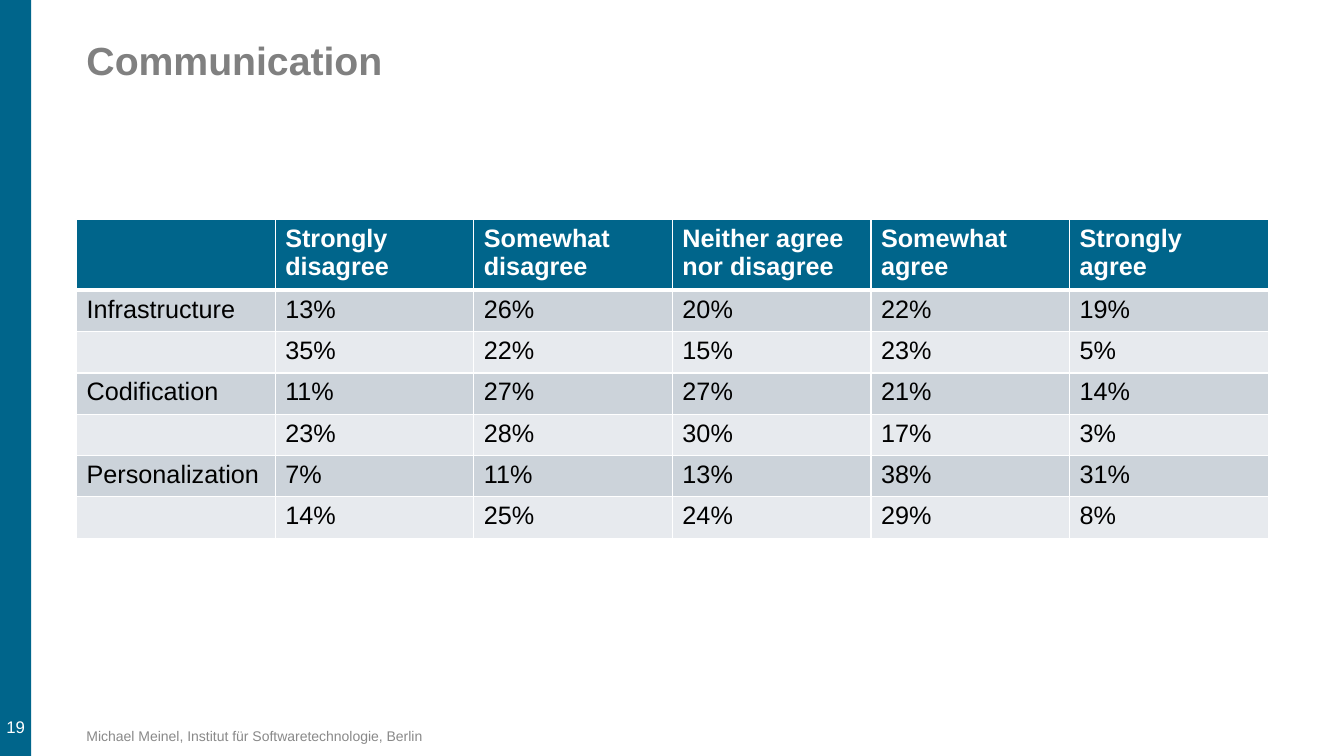
from dataclasses import dataclass

from lxml import etree
from pptx import Presentation
from pptx.dml.color import RGBColor
from pptx.enum.shapes import MSO_SHAPE
from pptx.enum.text import MSO_ANCHOR, PP_ALIGN
from pptx.oxml.ns import qn
from pptx.slide import Slide
from pptx.table import _Cell
from pptx.text.text import TextFrame
from pptx.util import Inches, Pt

RECTANGLE = MSO_SHAPE.RECTANGLE
TOP, MIDDLE, BOTTOM = MSO_ANCHOR.TOP, MSO_ANCHOR.MIDDLE, MSO_ANCHOR.BOTTOM
LEFT, CENTER = PP_ALIGN.LEFT, PP_ALIGN.CENTER

FONT = "Arial"
COLORS = {
    "blue": "00658B",
    "white": "FFFFFF",
    "black": "000000",
    "title": "808080",
    "footer": "898989",
    "odd_row": "CCD3DA",
    "even_row": "E7EAEE",
}

MARGIN = 0.76
BAR_WIDTH = 0.31
TABLE_TOP = 2.18
COLUMN_WIDTH = 1.97
HEADER_HEIGHT = 0.65
ROW_HEIGHT = 0.41

# "\v" breaks the line, "\n" starts a new paragraph.
ROWS = [
    ["", "Strongly disagree", "Somewhat disagree", "Neither agree nor disagree",
     "Somewhat\nagree", "Strongly\vagree"],
    ["Infrastructure", "13%", "26%", "20%", "22%", "19%"],
    ["", "35%", "22%", "15%", "23%", "5%"],
    ["Codification", "11%", "27%", "27%", "21%", "14%"],
    ["", "23%", "28%", "30%", "17%", "3%"],
    ["Personalization", "7%", "11%", "13%", "38%", "31%"],
    ["", "14%", "25%", "24%", "29%", "8%"],
]


@dataclass
class Label:
    text: str
    left: float
    top: float
    width: float
    height: float
    size: int
    color: str
    bold: bool = False
    anchor: MSO_ANCHOR = TOP
    align: PP_ALIGN = LEFT
    wrap: bool = True
    side_inset: float = 0.1
    end_inset: float = 0.05
    line_spacing: float = 1.0


LABELS = [
    Label("19", 0, 5.84, BAR_WIDTH, 1.57, 12, "white", anchor=BOTTOM, align=CENTER,
          wrap=False, side_inset=0.04, end_inset=0.1),
    Label("Michael Meinel, Institut für Softwaretechnologie, Berlin",
          MARGIN, 7.16, 4.5, 0.28, 10, "footer", anchor=MIDDLE),
    Label("Communication", MARGIN, 0.36, 11, 1.08, 28, "title", bold=True,
          line_spacing=0.9),
]


def rgb(name: str) -> RGBColor:
    return RGBColor.from_string(COLORS[name])


def format_text(frame: TextFrame, size: int, color: str, bold: bool) -> None:
    for para in frame.paragraphs:
        para.font.size = Pt(size)
        for span in para.runs:
            span.font.name = FONT
            span.font.size = Pt(size)
            span.font.bold = bold
            span.font.color.rgb = rgb(color)


def add_side_bar(page: Slide, height: int) -> None:
    bar = page.shapes.add_shape(RECTANGLE, 0, 0, Inches(BAR_WIDTH), height)
    bar.shadow.inherit = False
    bar.fill.solid()
    bar.fill.fore_color.rgb = rgb("blue")
    bar.line.fill.background()


def add_label(page: Slide, label: Label) -> None:
    box = page.shapes.add_textbox(Inches(label.left), Inches(label.top),
                                  Inches(label.width), Inches(label.height))
    frame = box.text_frame
    frame.word_wrap = label.wrap
    frame.vertical_anchor = label.anchor
    frame.margin_left = frame.margin_right = Inches(label.side_inset)
    frame.margin_top = frame.margin_bottom = Inches(label.end_inset)
    frame.text = label.text
    para = frame.paragraphs[0]
    para.alignment = label.align
    para.line_spacing = label.line_spacing
    format_text(frame, label.size, label.color, label.bold)


def set_borders(cell: _Cell, top: int, bottom: int) -> None:
    """Draw white borders, 1 pt at the sides; top and bottom are in points."""
    properties = cell._tc.get_or_add_tcPr()
    widths = {"a:lnL": 1, "a:lnR": 1, "a:lnT": top, "a:lnB": bottom}
    for index, (tag, width) in enumerate(widths.items()):
        line = etree.Element(qn(tag), w=str(Pt(width)))
        fill = etree.SubElement(line, qn("a:solidFill"))
        etree.SubElement(fill, qn("a:srgbClr"), val=COLORS["white"])
        properties.insert(index, line)


def add_survey_table(page: Slide) -> None:
    column_count = len(ROWS[0])
    height = HEADER_HEIGHT + ROW_HEIGHT * (len(ROWS) - 1)
    table = page.shapes.add_table(
        len(ROWS), column_count, Inches(MARGIN), Inches(TABLE_TOP),
        Inches(COLUMN_WIDTH * column_count), Inches(height)).table
    for column in table.columns:
        column.width = Inches(COLUMN_WIDTH)
    for row_index, texts in enumerate(ROWS):
        is_header = row_index == 0
        band = "odd_row" if row_index % 2 else "even_row"
        table.rows[row_index].height = Inches(HEADER_HEIGHT if is_header else ROW_HEIGHT)
        for column_index, text in enumerate(texts):
            cell = table.cell(row_index, column_index)
            cell.text_frame.text = text
            format_text(cell.text_frame, 18, "white" if is_header else "black", is_header)
            cell.fill.solid()
            cell.fill.fore_color.rgb = rgb("blue" if is_header else band)
            set_borders(cell, top=3 if row_index == 1 else 1, bottom=3 if is_header else 1)


def main() -> None:
    deck = Presentation()
    deck.slide_width, deck.slide_height = Inches(13.33), Inches(7.5)
    page = deck.slides.add_slide(deck.slide_layouts[6])
    add_side_bar(page, deck.slide_height)
    for label in LABELS:
        add_label(page, label)
    add_survey_table(page)
    deck.save("out.pptx")


if __name__ == "__main__":
    main()
